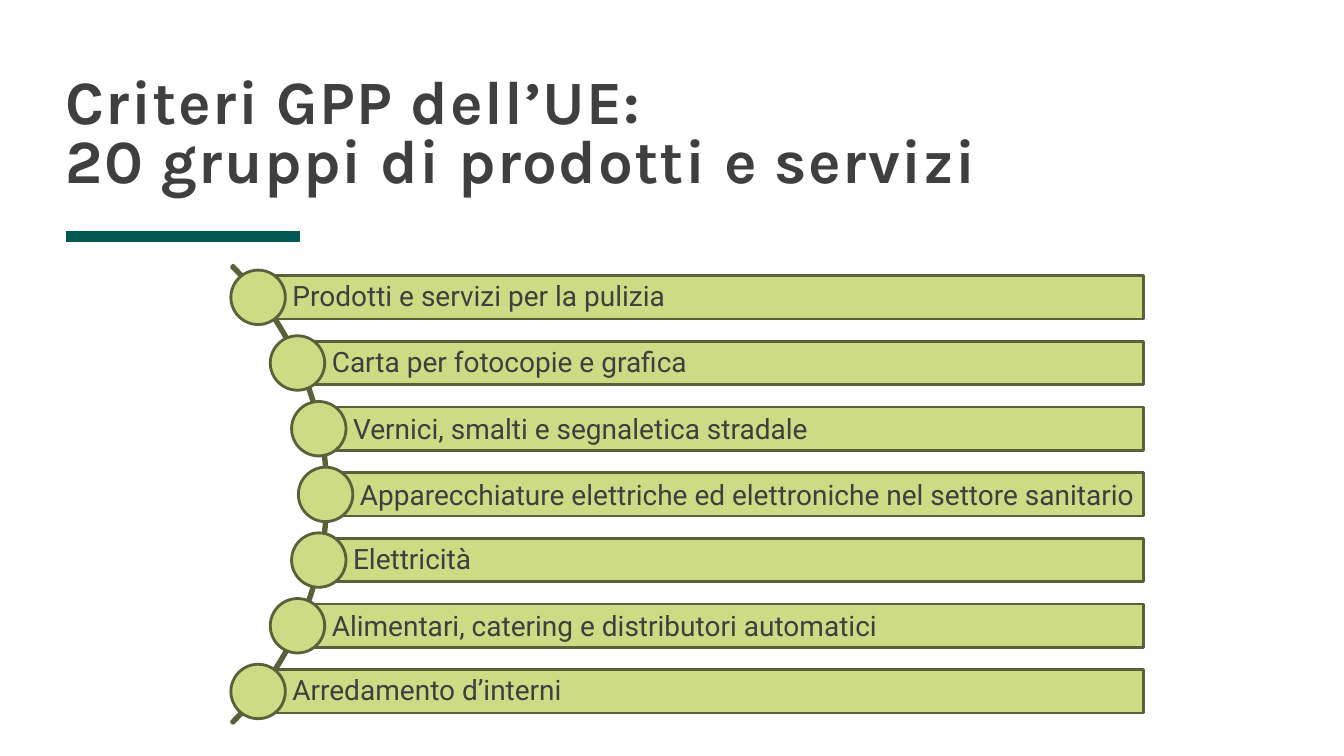
from math import sqrt

from pptx import Presentation
from pptx.dml.color import RGBColor
from pptx.enum.shapes import MSO_CONNECTOR as LINE, MSO_SHAPE as SHAPE
from pptx.enum.text import MSO_ANCHOR as ANCHOR, PP_ALIGN as ALIGN
from pptx.oxml.ns import qn
from pptx.util import Inches, Pt
from lxml.etree import SubElement

TEAL = RGBColor(0x03, 0x58, 0x54)
LIME = RGBColor(0xCC, 0xDB, 0x84)
OLIVE = RGBColor(0x59, 0x60, 0x3A)
GREY = RGBColor(0x3F, 0x3F, 0x3F)

TITLE = "Criteri GPP dell’UE:\v20 gruppi di prodotti e servizi"
GROUPS = [
    ("Prodotti e servizi per la pulizia", 0.9),
    ("Carta per fotocopie e grafica", 0.9),
    ("Vernici, smalti e segnaletica stradale", 1.0),
    ("Apparecchiature elettriche ed elettroniche nel settore sanitario", 1.0),
    ("Elettricità", 0.9),
    ("Alimentari, catering e distributori automatici", 1.0),
    ("Arredamento d’interni", 0.9),
]


def add_text(shape, text, font, size, spacing, insets, anchor):
    frame = shape.text_frame
    frame.text = text
    frame.word_wrap = True
    frame.vertical_anchor = anchor
    left, top, right, bottom = map(Inches, insets)
    frame.margin_left, frame.margin_top = left, top
    frame.margin_right, frame.margin_bottom = right, bottom
    para = frame.paragraphs[0]
    para.alignment = ALIGN.LEFT
    para.line_spacing = spacing
    for run in para.runs:
        run.font.name = font
        run.font.size = Pt(size)
        run.font.color.rgb = GREY
    return para.runs


def add_part(slide, kind, left, top, width, height):
    part = slide.shapes.add_shape(
        kind, Inches(left), Inches(top), Inches(width), Inches(height))
    part.shadow.inherit = False
    part.fill.solid()
    part.fill.fore_color.rgb = LIME
    part.line.color.rgb = OLIVE
    part.line.width = Pt(2)
    return part


def add_title(slide, left, top, width, height):
    box = slide.shapes.add_textbox(
        Inches(left), Inches(top), Inches(width), Inches(height))
    runs = add_text(box, TITLE, "Karla", 44, 0.8, (0, 0, 0, 0), ANCHOR.BOTTOM)
    for run in runs:
        run.font.bold = True
        run.font._element.set("spc", "100")
    level = Inches(top + height + 0.41)
    rule = slide.shapes.add_connector(
        LINE.STRAIGHT, Inches(left), level, Inches(left + 2.33), level)
    rule.line.color.rgb = TEAL
    rule.line.width = Pt(8)
    SubElement(rule._element.spPr, qn("a:effectLst"))


def add_list(slide, left, top, right, bottom):
    radius, dot, bar = 3.19, 0.54, 0.43
    mid = (top + bottom) / 2
    pitch = (bottom - top - dot) / (len(GROUPS) - 1)
    hub = left + dot / 2 - sqrt(radius ** 2 - (3 * pitch) ** 2)

    size = 6.43
    arc = add_part(slide, SHAPE.BLOCK_ARC,
                   hub - size / 2, mid - size / 2, size, size)
    for i, value in enumerate((189, 27, 0.004)):
        arc.adjustments[i] = value

    for i, (name, spacing) in enumerate(GROUPS):
        y = top + dot / 2 + i * pitch
        x = hub + sqrt(radius ** 2 - (y - mid) ** 2)
        row = add_part(slide, SHAPE.RECTANGLE, x, y - bar / 2, right - x, bar)
        add_text(row, name, "Roboto", 20, spacing,
                 (0.34, 0.06, 0.04, 0.06), ANCHOR.MIDDLE)
        add_part(slide, SHAPE.OVAL, x - dot / 2, y - dot / 2, dot, dot)


def main():
    deck = Presentation()
    deck.slide_width, deck.slide_height = Inches(13.33), Inches(7.5)
    slide = deck.slides.add_slide(deck.slide_layouts[6])
    add_title(slide, 0.65, 0.22, 12, 1.72)
    add_list(slide, 2.29, 2.68, 11.34, 7.13)
    deck.save("out.pptx")


if __name__ == "__main__":
    main()
